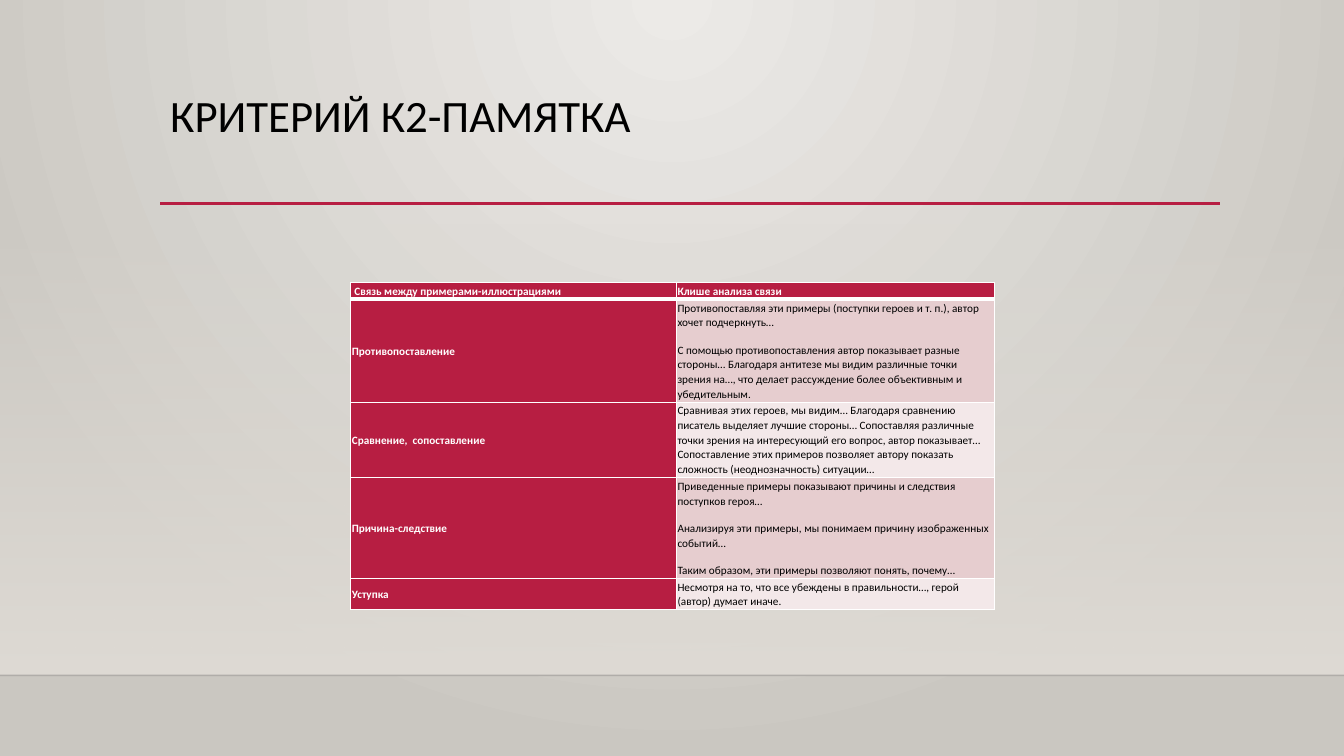
from lxml import etree
from pptx import Presentation
from pptx.dml.color import RGBColor
from pptx.enum.shapes import MSO_CONNECTOR, MSO_SHAPE
from pptx.enum.text import MSO_ANCHOR
from pptx.oxml import parse_xml
from pptx.oxml.ns import nsdecls, qn
from pptx.util import Inches, Pt

COLORS = {
    "accent": "B71E42", "white": "FFFFFF", "black": "000000", "edge": "000001",
    "glow": "ECEAE7", "rim": "CAC7C1", "wall": "DFDBD5",
    "band_dark": "E6CDCF", "band_light": "F3E8E9",
}
HEADER = [" Связь между примерами-иллюстрациями", "Клише анализа связи"]
LINKS = [
    ("Противопоставление", [
        "Противопоставляя эти примеры (поступки героев и т. п.), автор хочет подчеркнуть…",
        "С помощью противопоставления автор показывает разные стороны… Благодаря антитезе "
        "мы видим различные точки зрения на…, что делает рассуждение более объективным "
        "и убедительным."]),
    ("Сравнение,  сопоставление", [
        "Сравнивая этих героев, мы видим… Благодаря сравнению писатель выделяет лучшие "
        "стороны… Сопоставляя различные точки зрения на интересующий его вопрос, автор "
        "показывает… Сопоставление этих примеров позволяет автору показать сложность "
        "(неоднозначность) ситуации…"]),
    ("Причина-следствие", [
        "Приведенные примеры показывают причины и следствия поступков героя…",
        "Анализируя эти примеры, мы понимаем причину изображенных событий…",
        "Таким образом, эти примеры позволяют понять, почему…"]),
    ("Уступка", [
        "Несмотря на то, что все убеждены в правильности…, герой (автор) думает иначе."]),
]
COL_WIDTHS = [3.23, 3.15]
ROW_HEIGHTS = [0.17, 1.02, 0.75, 1.0, 0.31]


def rgb(name):
    return RGBColor.from_string(COLORS[name])


def set_alpha(color_parent, percent):
    clr = color_parent.find(".//" + qn("a:srgbClr"))
    etree.SubElement(clr, qn("a:alpha")).set("val", str(percent * 1000))


def set_gradient(fill, start, end):
    fill.gradient()
    for stop, name, position in zip(fill.gradient_stops, (start, end), (0, 1)):
        stop.color.rgb = rgb(name)
        stop.position = position


def write_text(tf, paragraphs, size, color="black", bold=False, spacing=1.0, after=0):
    tf.word_wrap = True
    for i, text in enumerate(paragraphs):
        p = tf.paragraphs[0] if i == 0 else tf.add_paragraph()
        p.line_spacing = spacing
        p.space_after = Pt(after)
        r = p.add_run()
        r.text = text
        r.font.name = "Calibri"
        r.font.size = Pt(size)
        r.font.bold = bold
        r.font.color.rgb = rgb(color)


def add_background(s):
    set_gradient(s.background.fill, "glow", "rim")
    grad = s._element.find(".//" + qn("a:gradFill"))
    grad.replace(grad.find(qn("a:lin")), parse_xml(
        f'<a:path {nsdecls("a")} path="circle">'
        '<a:fillToRect l="43000" t="0" r="43000" b="100000"/></a:path>'))


def add_wall(s):
    sp = s.shapes.add_shape(MSO_SHAPE.RECTANGLE, 0, Inches(2.21), Inches(13.33), Inches(4.49))
    sp.shadow.inherit = False
    sp.line.fill.background()
    set_gradient(sp.fill, "wall", "wall")
    grad = sp._element.spPr.find(qn("a:gradFill"))
    grad.find(qn("a:lin")).set("ang", "5400000")
    set_alpha(grad, 0)


def add_rule(s, left, right, y, color, width, alpha=100):
    line = s.shapes.add_connector(
        MSO_CONNECTOR.STRAIGHT, Inches(left), Inches(y), Inches(right), Inches(y))
    line.line.color.rgb = rgb(color)
    line.line.width = Pt(width)
    spPr = line._element.spPr
    if alpha < 100:
        set_alpha(spPr, alpha)
    etree.SubElement(spPr, qn("a:effectLst"))


def add_title(s, text):
    tf = s.shapes.add_textbox(Inches(1.59), Inches(0.88), Inches(10.5), Inches(1.15)).text_frame
    write_text(tf, [text], 32, spacing=0.9)


def set_borders(cell, top=1, bottom=1):
    tcPr = cell._tc.get_or_add_tcPr()
    for i, (side, width) in enumerate((("L", 1), ("R", 1), ("T", top), ("B", bottom))):
        tcPr.insert(i, parse_xml(
            f'<a:ln{side} {nsdecls("a")} w="{Pt(width)}"><a:solidFill>'
            f'<a:srgbClr val="{COLORS["white"]}"/></a:solidFill></a:ln{side}>'))


def fill_cell(cell, paragraphs, fill, **text_format):
    cell.margin_left = cell.margin_right = Inches(0.01)
    cell.margin_top = cell.margin_bottom = Inches(0.01)
    cell.vertical_anchor = MSO_ANCHOR.MIDDLE
    cell.fill.solid()
    cell.fill.fore_color.rgb = rgb(fill)
    write_text(cell.text_frame, paragraphs, 8, spacing=1.07, after=9, **text_format)


def add_links_table(s):
    table = s.shapes.add_table(
        len(ROW_HEIGHTS), len(COL_WIDTHS), Inches(3.48), Inches(2.8),
        Inches(sum(COL_WIDTHS)), Inches(sum(ROW_HEIGHTS))).table
    for col, width in zip(table.columns, COL_WIDTHS):
        col.width = Inches(width)
    for row, height in zip(table.rows, ROW_HEIGHTS):
        row.height = Inches(height)

    # Header row and first column share the accent look
    heading = {"fill": "accent", "color": "white", "bold": True}
    for col, text in enumerate(HEADER):
        fill_cell(table.cell(0, col), [text], **heading)
        set_borders(table.cell(0, col), bottom=3)
    for row, (link, phrases) in enumerate(LINKS, start=1):
        fill_cell(table.cell(row, 0), [link], **heading)
        fill_cell(table.cell(row, 1), phrases, "band_dark" if row % 2 else "band_light")
        for col in range(len(COL_WIDTHS)):
            set_borders(table.cell(row, col), top=3 if row == 1 else 1)


def main():
    prs = Presentation()
    prs.slide_width, prs.slide_height = Inches(13.33), Inches(7.5)
    s = prs.slides.add_slide(prs.slide_layouts[6])
    # Backdrop
    add_background(s)
    add_wall(s)
    add_rule(s, 0, 13.33, 6.7, "edge", 1, alpha=20)
    # Content
    add_rule(s, 1.59, 12.1, 2.02, "accent", 2.5)
    add_title(s, "КРИТЕРИЙ К2-ПАМЯТКА")
    add_links_table(s)
    prs.save("out.pptx")


if __name__ == "__main__":
    main()
